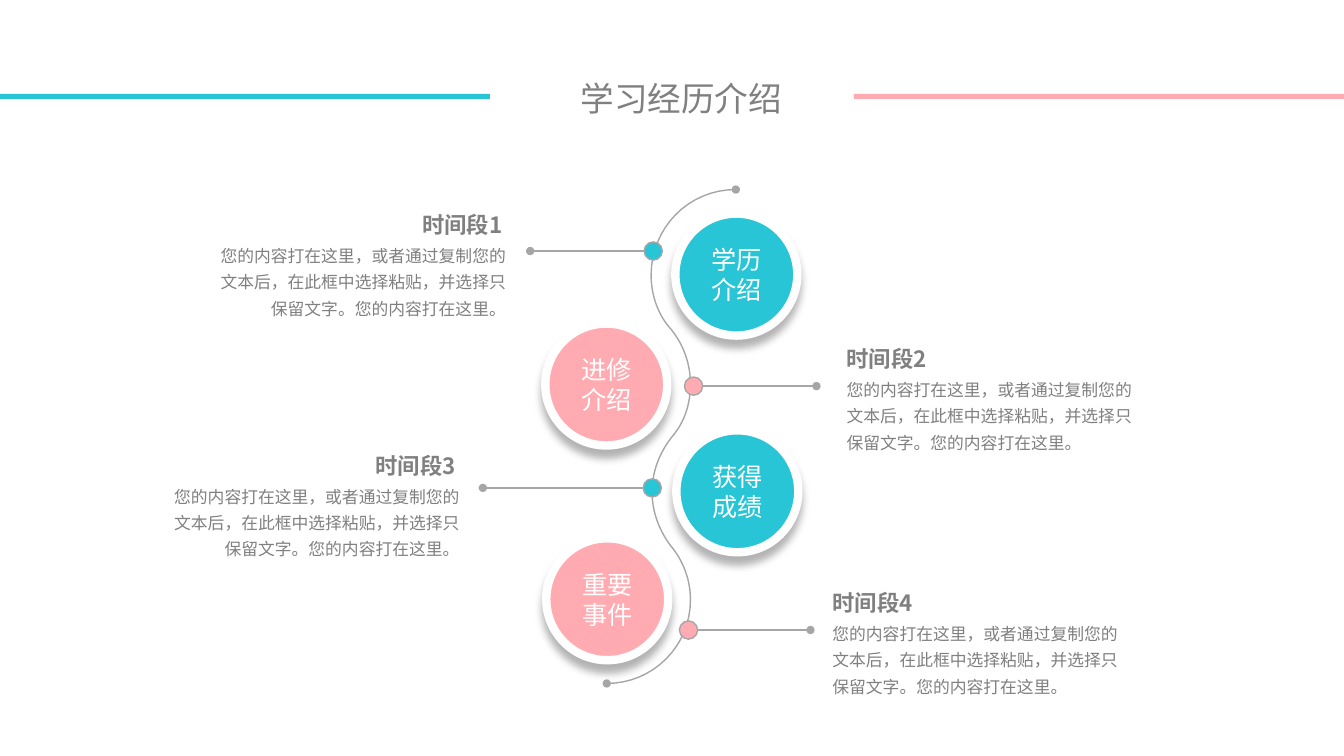
from lxml.etree import SubElement
from pptx import Presentation
from pptx.dml.color import RGBColor
from pptx.enum.shapes import MSO_CONNECTOR, MSO_SHAPE
from pptx.enum.text import MSO_ANCHOR, MSO_AUTO_SIZE, PP_ALIGN
from pptx.oxml.ns import qn
from pptx.util import Pt

TEAL = RGBColor(0x27, 0xC5, 0xD6)
PINK = RGBColor(0xFF, 0xAB, 0xB1)
GRAY_TEXT = RGBColor(0x80, 0x80, 0x80)
GRAY_LINE = RGBColor(0xA6, 0xA6, 0xA6)
WHITE = RGBColor(0xFF, 0xFF, 0xFF)
FONT = "Noto Sans CJK SC"
BODY = "您的内容打在这里，或者通过复制您的文本后，在此框中选择粘贴，并选择只保留文字。您的内容打在这里。"
CIRCLE_SIZE = 87.1
DOT_SIZE = 13


def write(shape, text, size, color=GRAY_TEXT, bold=False, align=PP_ALIGN.LEFT,
          spacing=None, anchor=MSO_ANCHOR.TOP, fit=MSO_AUTO_SIZE.SHAPE_TO_FIT_TEXT, inset=3.6):
    frame = shape.text_frame
    frame.text = text
    frame.word_wrap = True
    frame.auto_size = fit
    frame.vertical_anchor = anchor
    frame.margin_left = frame.margin_right = Pt(7.2)
    frame.margin_top = frame.margin_bottom = Pt(inset)
    for paragraph in frame.paragraphs:
        paragraph.alignment = align
        paragraph.line_spacing = spacing
        for run in paragraph.runs:
            run.font.name = FONT
            run.font.size = Pt(size)
            run.font.bold = bold
            run.font.color.rgb = color
            SubElement(run.font._element, qn("a:ea"), typeface=FONT)


def add_filled(kind, left, top, width, height, fill, line=None, line_width=1):
    shape = slide.shapes.add_shape(kind, Pt(left), Pt(top), Pt(width), Pt(height))
    shape.shadow.inherit = False
    shape.fill.solid()
    shape.fill.fore_color.rgb = fill
    if line is None:
        shape.line.fill.background()
    else:
        shape.line.color.rgb = line
        shape.line.width = Pt(line_width)
    return shape


presentation = Presentation()
presentation.slide_width = Pt(960)
presentation.slide_height = Pt(540)
slide = presentation.slides.add_slide(presentation.slide_layouts[5])

# Title between two colour bars
title = slide.shapes.title
title.left, title.top, title.width, title.height = Pt(355.7), Pt(51.8), Pt(262), Pt(36)
write(title, "学习经历介绍", 24, align=PP_ALIGN.CENTER)
for left, color in ((0, TEAL), (610, PINK)):
    add_filled(MSO_SHAPE.RECTANGLE, left, 67, 350, 3.6, color)

# Winding path: a start point, then Bézier segments (two controls and an end)
start = (433.4, 488.2)
segments = [
    ((466.6, 488.2), (493.2, 461.5), (493.2, 428.4)),
    ((493.2, 413.3), (487.4, 399.6), (478.8, 389.5)),
    ((470.9, 378.7), (465.8, 365.8), (465.8, 351.4)),
    ((465.8, 336.2), (471.6, 322.6), (480.2, 311.8)),
    ((488.9, 301.7), (493.2, 288.7), (493.2, 274.3)),
    ((493.2, 259.9), (488.2, 246.2), (479.5, 235.4)),
    ((470.2, 225.4), (465.1, 211), (465.1, 196.6)),
    ((465.1, 162.7), (491.8, 135.4), (525.6, 135.4)),
]
STEPS = 16
points = [start]
for control_1, control_2, end in segments:
    corners = (points[-1], control_1, control_2, end)
    for step in range(1, STEPS + 1):
        t = step / STEPS
        weights = ((1 - t) ** 3, 3 * t * (1 - t) ** 2, 3 * t * t * (1 - t), t ** 3)
        points.append(tuple(sum(w * corner[axis] for w, corner in zip(weights, corners))
                            for axis in (0, 1)))
points = [(Pt(x), Pt(y)) for x, y in points]
builder = slide.shapes.build_freeform(*points[0])
builder.add_line_segments(points[1:], close=False)
winding_path = builder.convert_to_shape()
winding_path.shadow.inherit = False
winding_path.fill.background()
winding_path.line.color.rgb = GRAY_LINE
winding_path.line.width = Pt(1)
for end_tag in ("a:headEnd", "a:tailEnd"):
    SubElement(winding_path.line._ln, qn(end_tag), type="oval")

# Stages: circle label and place, dot place, line end, text place
stages = [
    ("学历\n介绍", 482.4, 152.6, 460.1, 172.8, 378.7, 140.4, 167.8),
    ("进修介绍", 389.5, 231.1, 488.9, 269.3, 583.2, 597.6, 263.5),
    ("获得成绩", 483.1, 307.4, 459.4, 342, 344.9, 107.3, 339.8),
    ("重要事件", 390.2, 384.5, 485.3, 443.5, 578.9, 587.5, 437.8),
]
for number, stage in enumerate(stages, start=1):
    label, circle_left, circle_top, dot_left, dot_top, line_end, text_left, text_top = stage
    on_left = number % 2 == 1
    color = TEAL if on_left else PINK
    align = PP_ALIGN.RIGHT if on_left else PP_ALIGN.LEFT

    # Circle with a soft shadow below
    circle = add_filled(MSO_SHAPE.OVAL, circle_left, circle_top, CIRCLE_SIZE, CIRCLE_SIZE,
                        color, WHITE, 6)
    write(circle, label, 18, color=WHITE, align=PP_ALIGN.CENTER,
          anchor=MSO_ANCHOR.MIDDLE, fit=MSO_AUTO_SIZE.NONE)
    effects = circle._element.spPr.find(qn("a:effectLst"))
    shadow = SubElement(effects, qn("a:outerShdw"), blurRad=str(Pt(6)), dist=str(Pt(6)),
                        dir="5400000", algn="t", rotWithShape="0")
    shadow_color = SubElement(shadow, qn("a:srgbClr"), val="000000")
    SubElement(shadow_color, qn("a:alpha"), val="30000")

    # Dot on the path and its leader line
    add_filled(MSO_SHAPE.OVAL, dot_left, dot_top, DOT_SIZE, DOT_SIZE, color, GRAY_LINE)
    line_start = dot_left if on_left else dot_left + DOT_SIZE
    line_y = Pt(dot_top + DOT_SIZE / 2)
    leader = slide.shapes.add_connector(MSO_CONNECTOR.STRAIGHT, Pt(line_start), line_y,
                                        Pt(line_end), line_y)
    leader.line.color.rgb = GRAY_LINE
    leader.line.width = Pt(1)
    SubElement(leader.line._ln, qn("a:tailEnd"), type="oval")
    SubElement(leader._element.spPr, qn("a:effectLst"))

    # Description and heading
    body = slide.shapes.add_textbox(Pt(text_left), Pt(text_top), Pt(228.2), Pt(64.1))
    write(body, BODY, 12, align=align, spacing=1.3)
    heading_left = text_left + 146.2 if on_left else text_left
    heading = slide.shapes.add_textbox(Pt(heading_left), Pt(text_top - 26.6), Pt(79.2), Pt(26))
    write(heading, f"时间段{number}", 16, bold=True, align=align, spacing=1.5, inset=0)

presentation.save("out.pptx")
